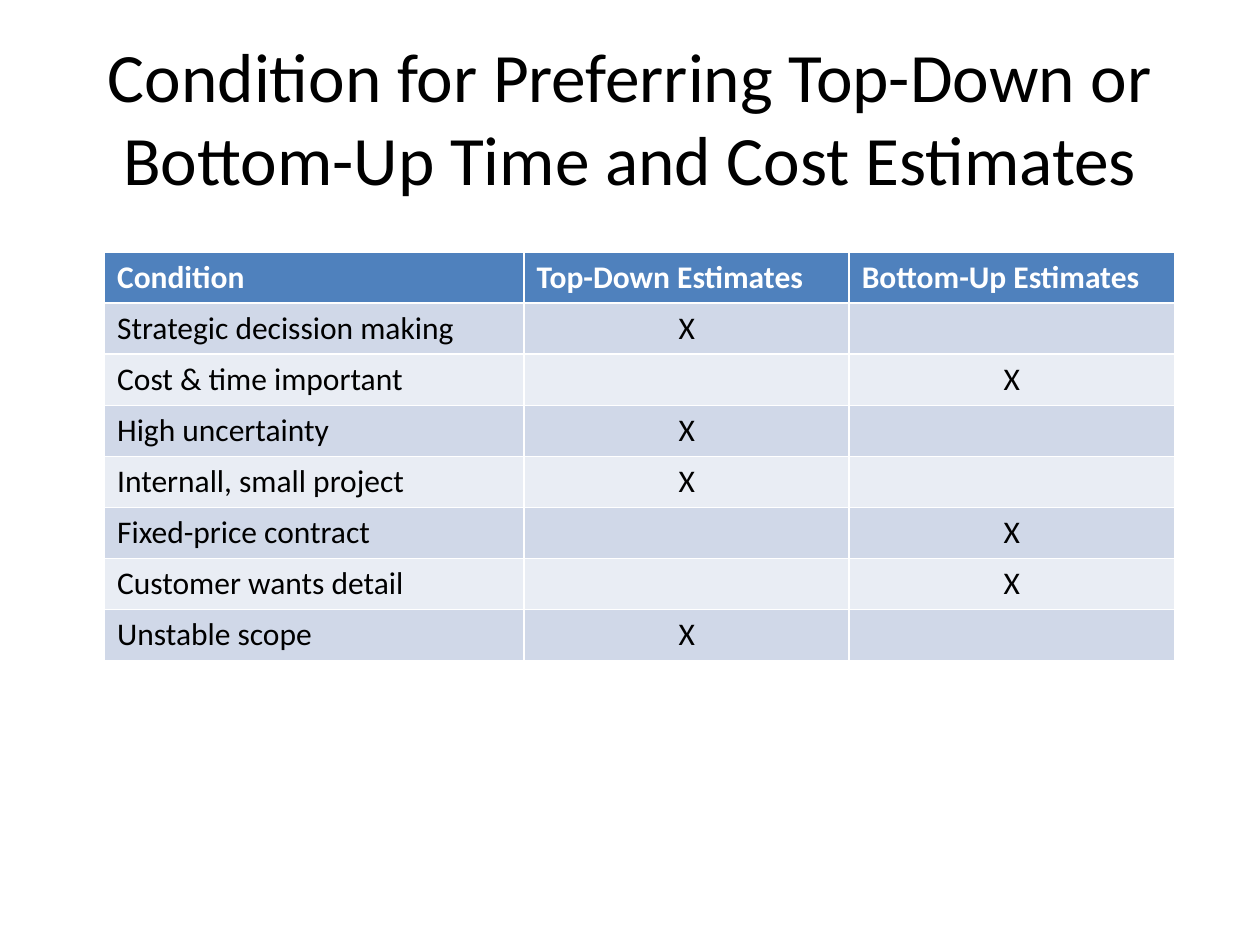
from pptx import Presentation
from pptx import util as u
from pptx.dml import color
from pptx.enum import text


def rgb(value):
    return color.RGBColor.from_string(value)


def write(frame, words, size=18, fill="000000", bold=False, align=text.PP_ALIGN.LEFT):
    paragraph = frame.paragraphs[0]
    paragraph.alignment = align
    run = paragraph.add_run()
    run.text = words
    run.font.name = "Calibri"
    run.font.size = u.Pt(size)
    run.font.bold = bold
    run.font.color.rgb = rgb(fill)


HEADERS = ["Condition", "Top-Down Estimates", "Bottom-Up Estimates"]
CONDITIONS = [
    ("Strategic decission making", "X", ""),
    ("Cost & time important", "", "X"),
    ("High uncertainty", "X", ""),
    ("Internall, small project", "X", ""),
    ("Fixed-price contract", "", "X"),
    ("Customer wants detail", "", "X"),
    ("Unstable scope", "X", ""),
]
HEADER_FILL = "4F81BD"
BAND_FILLS = ["D0D8E8", "E9EDF4"]
COLUMN_WIDTHS = [3.33, 2.58, 2.58]

presentation = Presentation()
presentation.slide_width = u.Inches(10)
presentation.slide_height = u.Inches(7.5)
slide = presentation.slides.add_slide(presentation.slide_layouts[5])

title = slide.shapes.title
title.left, title.top = u.Inches(0.5), u.Inches(0.3)
title.width, title.height = u.Inches(9), u.Inches(1.25)
title.text_frame.auto_size = text.MSO_AUTO_SIZE.NONE
title.text_frame.vertical_anchor = text.MSO_ANCHOR.MIDDLE
write(title.text_frame, "Condition for Preferring Top-Down or Bottom-Up Time and Cost Estimates",
      size=39.6, align=text.PP_ALIGN.CENTER)

table = slide.shapes.add_table(
    len(CONDITIONS) + 1, len(HEADERS),
    u.Inches(0.83), u.Inches(2), u.Inches(8.5), u.Inches(3.24),
).table
for column, width in zip(table.columns, COLUMN_WIDTHS):
    column.width = u.Inches(width)

for index, header in enumerate(HEADERS):
    cell = table.cell(0, index)
    cell.fill.solid()
    cell.fill.fore_color.rgb = rgb(HEADER_FILL)
    write(cell.text_frame, header, fill="FFFFFF", bold=True)

for row, condition in enumerate(CONDITIONS):
    for index, words in enumerate(condition):
        cell = table.cell(row + 1, index)
        cell.fill.solid()
        cell.fill.fore_color.rgb = rgb(BAND_FILLS[row % 2])
        if words:
            align = text.PP_ALIGN.CENTER if index else text.PP_ALIGN.LEFT
            write(cell.text_frame, words, align=align)

presentation.save("out.pptx")
